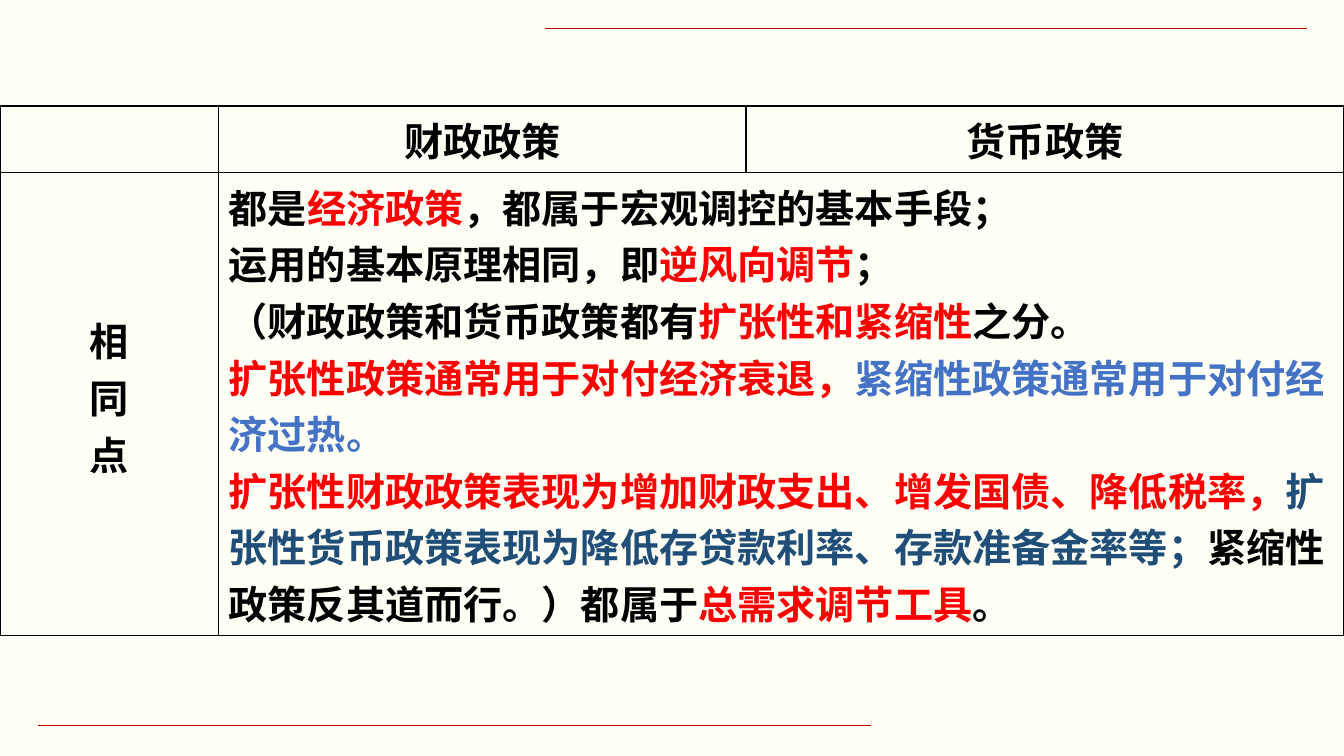
import pptx
import pptx.dml.color
import pptx.enum.shapes
import pptx.enum.text
import pptx.oxml.ns
import pptx.util
from lxml import etree

COLORS = {
    "background": "FFFFF5",
    "rule": "C00000",
    "black": "000000",
    "red": "FF0000",
    "blue": "4472C4",
    "navy": "1F4E79",
}
CENTER = pptx.enum.text.PP_ALIGN.CENTER
LEFT = pptx.enum.text.PP_ALIGN.LEFT

# Each paragraph is a list of (text, colour) pieces
COMMON_POINTS = [
    [("都是", "black"), ("经济政策", "red"), ("，都属于宏观调控的基本手段；", "black")],
    [("运用的基本原理相同，即", "black"), ("逆风向调节", "red"), ("；", "black")],
    [("（财政政策和货币政策都有", "black"), ("扩张性和紧缩性", "red"), ("之分。", "black")],
    [("扩张性政策通常用于对付经济衰退，", "red"),
     ("紧缩性政策通常用于对付经济过热。", "blue")],
    [("扩张性财政政策表现为增加财政支出、增发国债、降低税率，", "red"),
     ("扩张性货币政策表现为降低存贷款利率、存款准备金率等；", "navy"),
     ("紧缩性政策反其道而行。）都属于", "black"),
     ("总需求调节工具", "red"), ("。", "black")],
]


def rgb(name):
    return pptx.dml.color.RGBColor.from_string(COLORS[name])


def add_run(paragraph, text, font="Times New Roman", size=28, bold=True, color="black"):
    run = paragraph.add_run()
    run.text = text
    run.font.name = font
    run.font.size = pptx.util.Pt(size)
    run.font.bold = bold
    run.font.color.rgb = rgb(color)


class SlideBuilder:
    def __init__(self, presentation):
        self.slide = presentation.slides.add_slide(presentation.slide_layouts[6])
        fill = self.slide.background.fill
        fill.solid()
        fill.fore_color.rgb = rgb("background")

    def rule(self, left, right, top):
        connector = self.slide.shapes.add_connector(
            pptx.enum.shapes.MSO_CONNECTOR.STRAIGHT,
            *(pptx.util.Cm(value) for value in (left, top, right, top)))
        connector.line.color.rgb = rgb("rule")
        connector.line.width = pptx.util.Pt(0.5)
        properties = connector._element.spPr
        etree.SubElement(properties, pptx.oxml.ns.qn("a:effectLst"))

    def table(self, left, top, widths, heights):
        frame = self.slide.shapes.add_table(
            len(heights), len(widths),
            *(pptx.util.Cm(value) for value in (left, top, sum(widths), sum(heights))))
        table = frame.table
        table.first_row = table.horz_banding = False
        for column, width in zip(table.columns, widths):
            column.width = pptx.util.Cm(width)
        for row, height in zip(table.rows, heights):
            row.height = pptx.util.Cm(height)
        for cell in table.iter_cells():
            cell.fill.background()
            self.borders(cell)
        return table

    def borders(self, cell, width=1, color="black"):
        properties = cell._tc.get_or_add_tcPr()
        for index, side in enumerate(("lnL", "lnR", "lnT", "lnB")):
            line = etree.Element(pptx.oxml.ns.qn("a:" + side), w=str(pptx.util.Pt(width)))
            fill = etree.SubElement(line, pptx.oxml.ns.qn("a:solidFill"))
            etree.SubElement(fill, pptx.oxml.ns.qn("a:srgbClr"), val=COLORS[color])
            properties.insert(index, line)

    def cell_text(self, cell, paragraphs, alignment=CENTER):
        for index, pieces in enumerate(paragraphs):
            frame = cell.text_frame
            paragraph = frame.add_paragraph() if index else frame.paragraphs[0]
            paragraph.alignment = alignment
            for text, color in pieces:
                add_run(paragraph, text, color=color)


def main():
    presentation = pptx.Presentation()
    presentation.slide_width = pptx.util.Cm(33.87)
    presentation.slide_height = pptx.util.Cm(19.05)
    builder = SlideBuilder(presentation)

    # Decorative rules
    builder.rule(13.74, 32.94, 0.71)
    builder.rule(0.97, 21.95, 18.29)

    # Policy comparison table
    table = builder.table(0, 2.67, widths=(5.51, 13.29, 15.07), heights=(1.45, 11.38))
    for column, heading in enumerate(("财政政策", "货币政策"), start=1):
        builder.cell_text(table.cell(0, column), [[(heading, "black")]])

    # Row label, one character per line
    label = table.cell(1, 0)
    label.margin_top = pptx.util.Cm(3.5)
    builder.cell_text(label, [[(character, "black")] for character in "相同点"])

    # Shared features across both policies
    shared = table.cell(1, 1)
    shared.merge(table.cell(1, 2))
    builder.cell_text(shared, COMMON_POINTS, alignment=LEFT)

    presentation.save("out.pptx")


if __name__ == "__main__":
    main()
